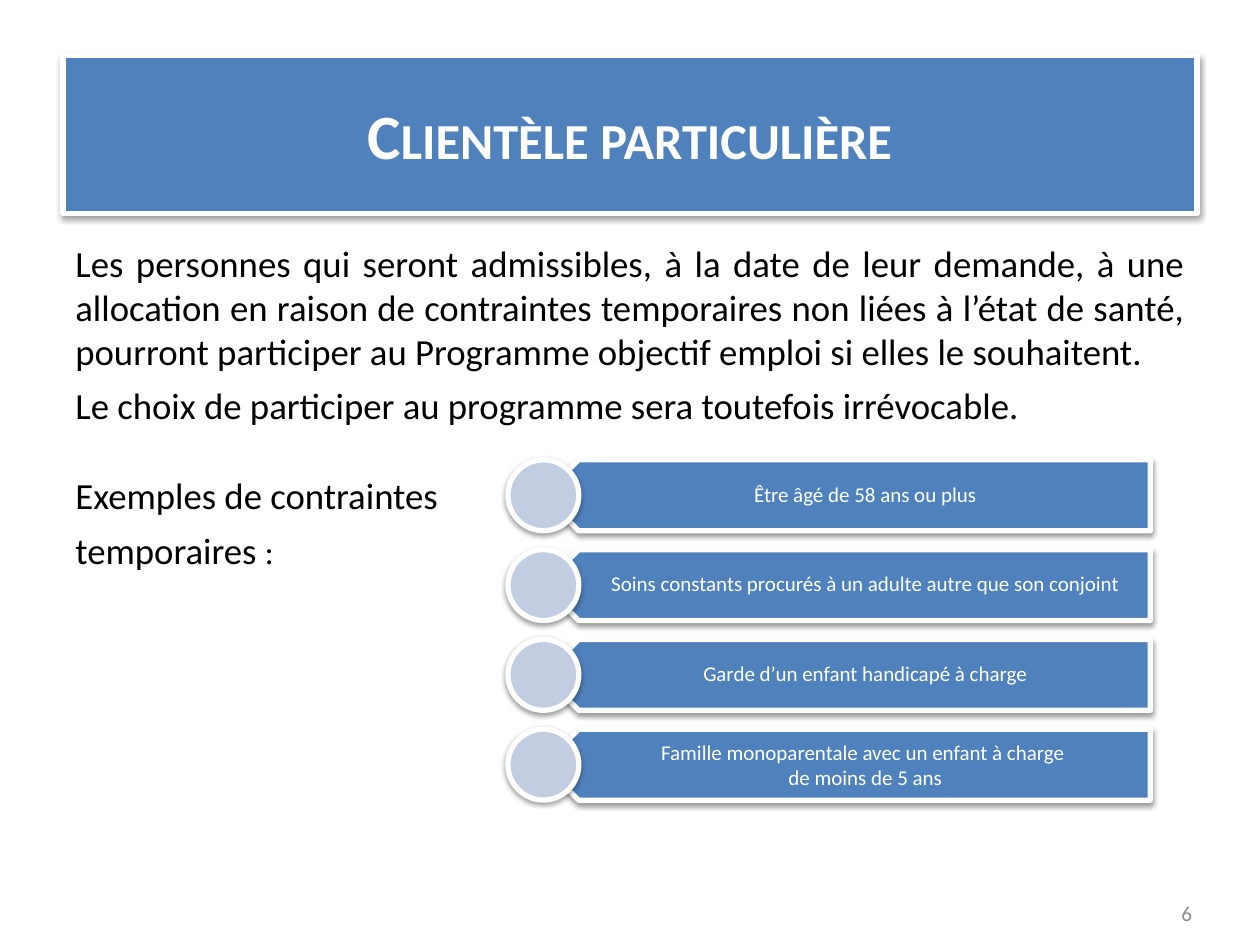
import pptx
import pptx.util
import pptx.dml.color
import pptx.enum.shapes
import pptx.enum.text
import lxml.etree

Cm, Pt = pptx.util.Cm, pptx.util.Pt
Kind = pptx.enum.shapes.MSO_SHAPE
Align = pptx.enum.text.PP_ALIGN
Anchor = pptx.enum.text.MSO_ANCHOR

TITLE = "Clientèle particulière"
# Each paragraph: space before in points, then its (text, size) runs
BODY = [
    (0, [("Les personnes qui seront admissibles, à la date de leur demande, "
          "à une allocation en raison de contraintes temporaires non liées à "
          "l’état de santé, pourront participer au Programme objectif emploi "
          "si elles le souhaitent. ", 21)]),
    (6, [("Le choix de participer au programme sera toutefois irrévocable.", 21)]),
    (26, [("Exemples de contraintes ", 21)]),
    (6, [("temporaires ", 21), (": ", 19)]),
]
CASES = [
    ["Être âgé de 58 ans ou plus"],
    ["Soins constants procurés à un adulte autre que son conjoint"],
    ["Garde d’un enfant handicapé à charge"],
    ["Famille monoparentale avec un enfant à charge ", "de moins de 5 ans"],
]
NUMBER = "6"

FONT = "Calibri"
COLORS = {"blue": "4F81BD", "pale": "C2CDE1", "white": "FFFFFF",
          "black": "000000", "gray": "8C8C8C"}

LEFT, WIDTH = 1.27, 22.86
DOT, TOP, PITCH = 1.43, 9.27, 1.81
DOT_X, BAR_X, TEXT_X, RIGHT = 10.24, 10.95, 11.3, 23.19


def color(name):
    return pptx.dml.color.RGBColor.from_string(COLORS[name])


def shade(shape):
    """Give the shape a soft shadow that falls straight down."""
    shape.shadow.inherit = False
    ns = "http://schemas.openxmlformats.org/drawingml/2006/main"
    effects = shape.element.spPr.find(f"{{{ns}}}effectLst")
    effects.append(pptx.oxml.parse_xml(
        f'<a:outerShdw xmlns:a="{ns}" blurRad="40000" dist="20000" '
        'dir="5400000" rotWithShape="0"><a:srgbClr val="000000">'
        '<a:alpha val="38000"/></a:srgbClr></a:outerShdw>'))


def block(slide, kind, box, fill):
    shape = slide.shapes.add_shape(kind, *map(Cm, box))
    shape.fill.solid()
    shape.fill.fore_color.rgb = color(fill)
    shape.line.color.rgb = color("white")
    shape.line.width = Pt(3)
    shade(shape)
    return shape


def label(slide, box, anchor=Anchor.MIDDLE):
    frame = slide.shapes.add_textbox(*map(Cm, box)).text_frame
    frame.word_wrap = True
    frame.vertical_anchor = anchor
    return frame


def write(para, text, size, tint, align):
    para.alignment = align
    run = para.add_run()
    run.text = text
    run.font.name = FONT
    run.font.size = Pt(size)
    run.font.color.rgb = color(tint)
    return run


def lines(frame, count):
    """Yield the given number of paragraphs, the first one already there."""
    for i in range(count):
        yield frame.add_paragraph() if i else frame.paragraphs[0]


def head(slide):
    band = block(slide, Kind.RECTANGLE, (LEFT, 1.12, WIDTH, 3.18), "blue")
    frame = band.text_frame
    frame.vertical_anchor = Anchor.MIDDLE
    run = write(frame.paragraphs[0], TITLE, 36, "white", Align.CENTER)
    run.font.bold = True
    run.font._element.set("cap", "small")


def body(slide):
    frame = label(slide, (LEFT, 4.72, WIDTH, 11.4), Anchor.TOP)
    for para, (gap, runs) in zip(lines(frame, len(BODY)), BODY):
        para.space_before = Pt(gap)
        for text, size in runs:
            write(para, text, size, "black", Align.JUSTIFY)


def case(slide, top, texts):
    bar = block(slide, Kind.PENTAGON, (BAR_X, top, RIGHT - BAR_X, DOT), "blue")
    bar.rotation = 180
    frame = label(slide, (TEXT_X, top, RIGHT - TEXT_X, DOT))
    frame.margin_left, frame.margin_right = Cm(0.63), Cm(0.23)
    for para, text in zip(lines(frame, len(texts)), texts):
        write(para, text, 12, "white", Align.CENTER)
        if len(texts) == 1:
            para.line_spacing = 0.9
    block(slide, Kind.OVAL, (DOT_X, top, DOT, DOT), "pale")


def main():
    deck = pptx.Presentation()
    deck.slide_width, deck.slide_height = Cm(25.4), Cm(19.05)
    slide = deck.slides.add_slide(deck.slide_layouts[6])
    head(slide)
    body(slide)
    frame = label(slide, (18.36, 17.91, 5.92, 1.01))
    write(frame.paragraphs[0], NUMBER, 12, "gray", Align.RIGHT)
    for i, texts in enumerate(CASES):
        case(slide, TOP + i * PITCH, texts)
    deck.save("out.pptx")


if __name__ == "__main__":
    main()
